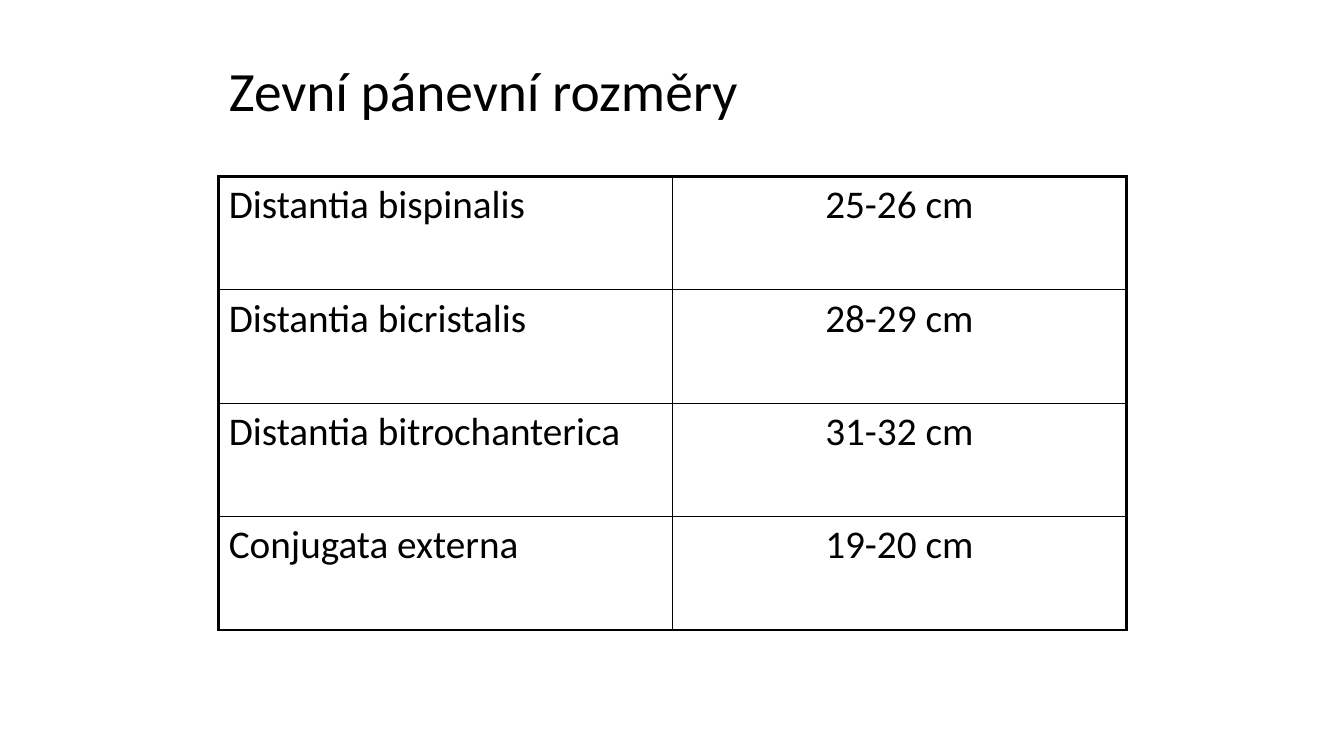
import pptx
import pptx.util
import pptx.dml.color
import pptx.enum.text
import lxml.etree
import pptx.oxml.ns

Inches = pptx.util.Inches
Pt = pptx.util.Pt
ALIGN = pptx.enum.text.PP_ALIGN
ANCHOR = pptx.enum.text.MSO_ANCHOR
BLACK = pptx.dml.color.RGBColor(0, 0, 0)
WHITE = pptx.dml.color.RGBColor(255, 255, 255)
FONT = "Calibri"
OUTER_LINE = 2.25
INNER_LINE = 1

DIMENSIONS = [
    ("Distantia bispinalis", "25-26 cm"),
    ("Distantia bicristalis", "28-29 cm"),
    ("Distantia bitrochanterica", "31-32 cm"),
    ("Conjugata externa", "19-20 cm"),
]


def write_text(frame, text, size, align=ALIGN.LEFT, line_spacing=1.0):
    para = frame.paragraphs[0]
    para.alignment = align
    para.line_spacing = line_spacing
    span = para.add_run()
    span.text = text
    span.font.name = FONT
    span.font.size = Pt(size)
    span.font.bold = False
    span.font.color.rgb = BLACK


def set_borders(cell, widths):
    properties = cell._tc.get_or_add_tcPr()
    for index, (side, width) in enumerate(widths.items()):
        line = lxml.etree.Element(pptx.oxml.ns.qn(f"a:ln{side}"), w=str(Pt(width)))
        fill = lxml.etree.SubElement(line, pptx.oxml.ns.qn("a:solidFill"))
        lxml.etree.SubElement(fill, pptx.oxml.ns.qn("a:srgbClr"), val=str(BLACK))
        properties.insert(index, line)


def place_title(page, text, left, top, width, height):
    title = page.shapes.title
    title.left, title.top = Inches(left), Inches(top)
    title.width, title.height = Inches(width), Inches(height)
    frame = title.text_frame
    frame.word_wrap = True
    frame.auto_size = pptx.enum.text.MSO_AUTO_SIZE.NONE
    frame.vertical_anchor = ANCHOR.MIDDLE
    write_text(frame, text, 39.6, line_spacing=0.9)


def place_table(page, rows, left, top, width, height):
    row_count, column_count = len(rows), len(rows[0])
    table = page.shapes.add_table(
        row_count, column_count,
        Inches(left), Inches(top), Inches(width), Inches(height),
    ).table
    table.first_row = False
    table.horz_banding = False
    for row_index, row in enumerate(rows):
        for column_index, text in enumerate(row):
            cell = table.cell(row_index, column_index)
            cell.fill.background()
            cell.vertical_anchor = ANCHOR.TOP
            align = ALIGN.CENTER if column_index else ALIGN.LEFT
            write_text(cell.text_frame, text, 28, align)
            on_edge = {
                "L": column_index == 0,
                "R": column_index == column_count - 1,
                "T": row_index == 0,
                "B": row_index == row_count - 1,
            }
            set_borders(cell, {
                side: OUTER_LINE if edge else INNER_LINE
                for side, edge in on_edge.items()
            })


def main():
    deck = pptx.Presentation()
    deck.slide_width, deck.slide_height = Inches(13.33), Inches(7.5)
    page = deck.slides.add_slide(deck.slide_layouts[5])
    page.background.fill.solid()
    page.background.fill.fore_color.rgb = WHITE
    place_title(page, "Zevní pánevní rozměry", 2.17, 0.59, 9, 0.67)
    place_table(page, DIMENSIONS, 2.17, 1.75, 9, 4.5)
    deck.save("out.pptx")


if __name__ == "__main__":
    main()
